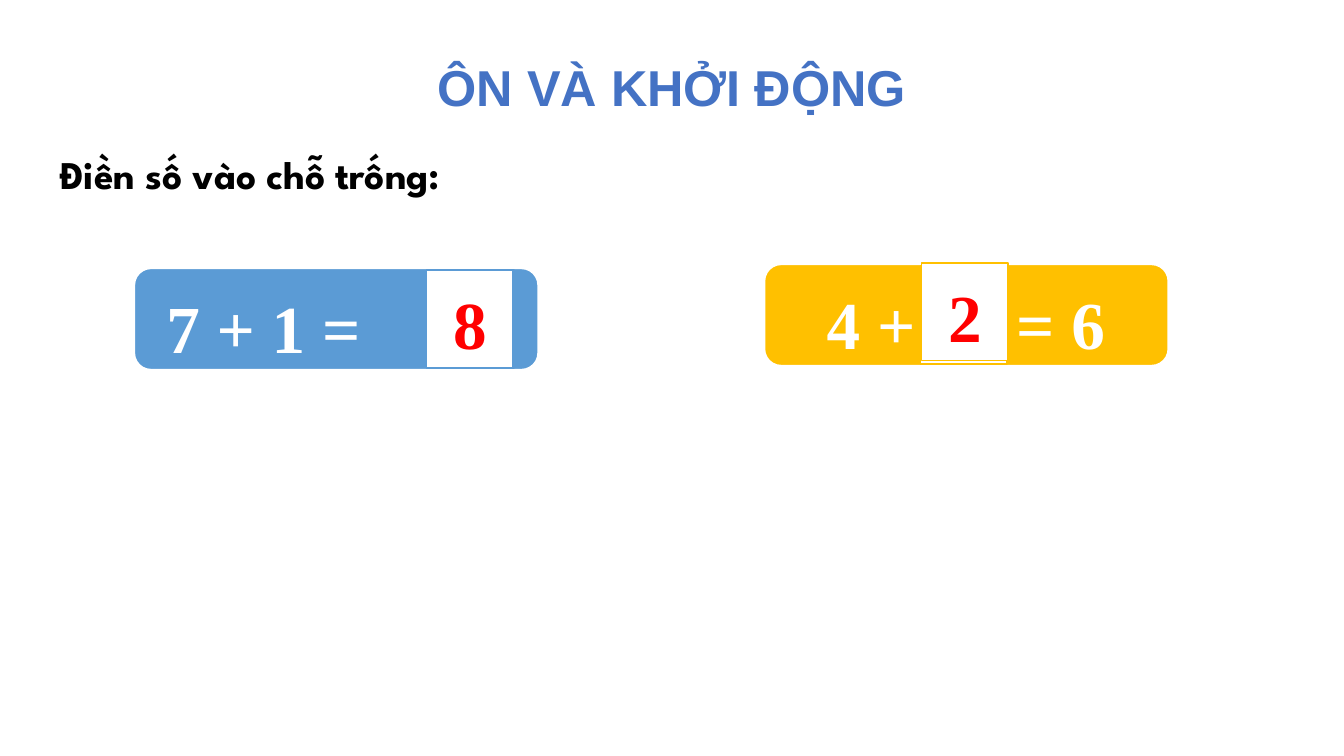
import pptx
import pptx.util
from pptx.dml.color import RGBColor
from pptx.enum.shapes import MSO_SHAPE
from pptx.enum.text import MSO_ANCHOR, MSO_AUTO_SIZE, PP_ALIGN
from pptx.oxml.ns import qn
from lxml import etree

Inches, Pt = pptx.util.Inches, pptx.util.Pt


def color(value):
    return RGBColor.from_string(value)


class Lesson:
    WHITE, RED, TITLE, BLACK = "FFFFFF", "FF0000", "4472C4", "000000"
    NUMBERS = "Times New Roman"

    def __init__(self, prs):
        self.s = prs.slides.add_slide(prs.slide_layouts[1])

    def set_text(self, sp, text, size, font, ink, align=PP_ALIGN.LEFT,
                 anchor=MSO_ANCHOR.TOP, spacing=1.0):
        tf = sp.text_frame
        tf.text = text
        p = tf.paragraphs[0]
        r = p.runs[0]
        formats = {
            tf: {"word_wrap": True, "auto_size": MSO_AUTO_SIZE.NONE,
                 "vertical_anchor": anchor},
            p: {"alignment": align, "line_spacing": spacing,
                "space_before": Pt(0)},
            r.font: {"size": Pt(size), "name": font, "bold": True},
        }
        for target, values in formats.items():
            for name, value in values.items():
                setattr(target, name, value)
        r.font.color.rgb = color(ink)
        return p

    def placeholder(self, index, box, *args, **kwargs):
        sp = self.s.placeholders[index]
        sp.left, sp.top, sp.width, sp.height = map(Inches, box)
        return self.set_text(sp, *args, **kwargs)

    def title(self, text, box):
        self.placeholder(0, box, text, 36, "Arial", self.TITLE,
                         align=PP_ALIGN.CENTER)

    def prompt(self, text, box):
        p = self.placeholder(1, box, text, 28, "League Spartan", self.BLACK)
        pPr = p._p.get_or_add_pPr()
        pPr.set("marL", "0")
        pPr.set("indent", "0")
        etree.SubElement(pPr, qn("a:buNone"))

    def shape(self, kind, box, fill, line, width):
        sp = self.s.shapes.add_shape(kind, *map(Inches, box))
        sp.shadow.inherit = False
        sp.fill.solid()
        sp.fill.fore_color.rgb = color(fill)
        sp.line.color.rgb = color(line)
        sp.line.width = Pt(width)
        return sp

    def equation(self, text, left, top, fill, inset, tab=None):
        sp = self.shape(MSO_SHAPE.ROUNDED_RECTANGLE, (left, top, 4.01, 1.01),
                        fill, self.WHITE, 1.5)
        p = self.set_text(sp, text, 48, self.NUMBERS, self.WHITE, spacing=1.1)
        sp.text_frame.margin_left = Inches(inset)
        if tab:
            # The tab stop leaves room for the missing number
            tabs = etree.SubElement(p._p.get_or_add_pPr(), qn("a:tabLst"))
            etree.SubElement(tabs, qn("a:tab"), pos=str(Inches(tab)), algn="l")

    def blank(self, left, top, line):
        return self.shape(MSO_SHAPE.RECTANGLE, (left, top, 0.86, 0.97),
                          self.WHITE, line, 1)

    def answer(self, text, left, top, line):
        self.set_text(self.blank(left, top, line), text, 48, self.NUMBERS,
                      self.RED, align=PP_ALIGN.CENTER,
                      anchor=MSO_ANCHOR.MIDDLE, spacing=1.1)


def main():
    prs = pptx.Presentation()
    prs.slide_width, prs.slide_height = Inches(13.33), Inches(7.5)
    lesson = Lesson(prs)

    # Heading and instruction
    lesson.title("ÔN VÀ KHỞI ĐỘNG", (3.62, 0.51, 6.09, 0.71))
    lesson.prompt("Điền số vào chỗ trống:", (0.5, 1.44, 4.59, 0.57))

    # Equation with a missing addend
    yellow = "FFC000"
    lesson.equation("4 +\t= 6", 7.58, 2.62, yellow, inset=0.57, tab=1.88)
    lesson.blank(9.13, 2.64, yellow)
    lesson.answer("2", 9.14, 2.61, yellow)

    # Equation with a missing sum
    blue = "5B9BD5"
    lesson.equation("7 + 1 =", 1.33, 2.66, blue, inset=0.27)
    lesson.blank(4.24, 2.68, blue)
    lesson.answer("8", 4.23, 2.68, blue)

    prs.save("out.pptx")


if __name__ == "__main__":
    main()
